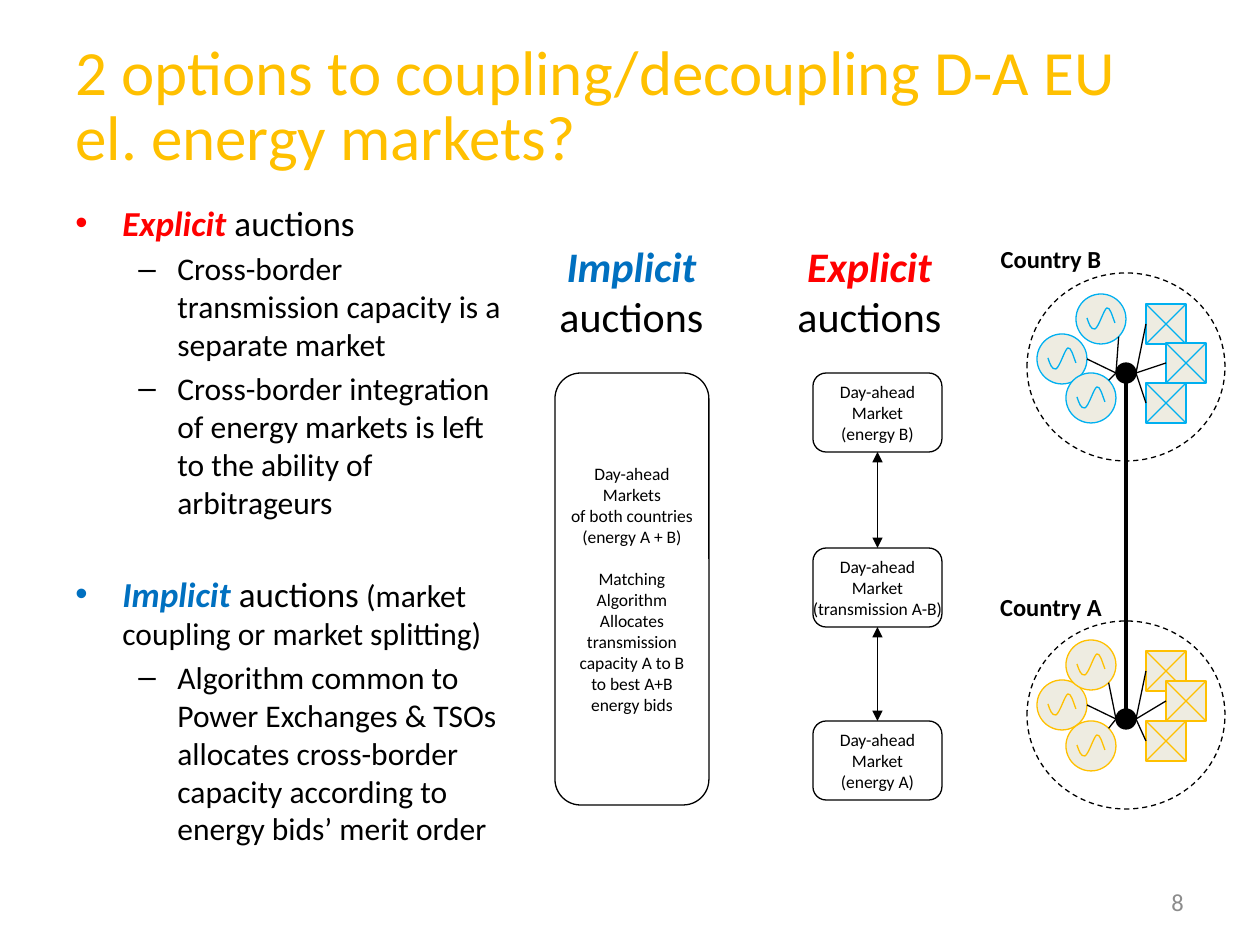
import math

from lxml import etree
from pptx import Presentation
from pptx import util as u
from pptx.dml.color import RGBColor
from pptx.enum import dml, shapes, text
from pptx.oxml.ns import qn

EMU_PER_PX = 914400 / 126
FONT = "Calibri"
BLACK = RGBColor(0, 0, 0)
WHITE = RGBColor(255, 255, 255)
GREY = RGBColor(0x8C, 0x8C, 0x8C)
CREAM = RGBColor(0xEE, 0xEC, 0xE1)
RED = RGBColor(0xFF, 0, 0)
BLUE = RGBColor(0, 0x70, 0xC0)
CYAN = RGBColor(0, 0xB0, 0xF0)
AMBER = RGBColor(0xFF, 0xC0, 0)

GENERATOR, LOAD, HUB = 50, 40, 20
WAVE = [(11, 24), (13, 30), (15, 36), (19, 35), (23, 33),
        (28, 15), (31, 14), (34, 13), (36, 21), (39, 29)]


def px(value):
    return u.Emu(round(value * EMU_PER_PX))


def add_span(para, words, size=18, color=BLACK, strong=False):
    """Add a run; strong means bold and italic."""
    span = para.add_run()
    span.text = words
    font = span.font
    font.name, font.size = FONT, u.Pt(size)
    font.bold = font.italic = strong
    font.color.rgb = color
    return span


def set_bullet(para, mark, color, margin, hang):
    """Hang a bullet mark in front of the paragraph; lengths in px."""
    props = para._p.get_or_add_pPr()
    props.set("marL", str(px(margin)))
    props.set("indent", str(-px(hang)))
    tint = etree.SubElement(props, qn("a:buClr"))
    etree.SubElement(tint, qn("a:srgbClr")).set("val", str(color))
    etree.SubElement(props, qn("a:buFont")).set("typeface", "Arial")
    etree.SubElement(props, qn("a:buChar")).set("char", mark)


class Painter:
    """Holds the current page and the line style shared by its elements."""

    def __init__(self, page, line_width=0.75):
        self.page = page
        self.line_width = line_width

    def text_box(self, left, top, width, height, middle=False):
        box = self.page.shapes.add_textbox(px(left), px(top), px(width), px(height))
        frame = box.text_frame
        frame.word_wrap = True
        frame.vertical_anchor = text.MSO_ANCHOR.MIDDLE if middle else text.MSO_ANCHOR.TOP
        return frame

    def shape(self, kind, left, top, width, height, fill=None, color=BLACK, parent=None):
        home = (parent or self.page).shapes
        shape = home.add_shape(kind, px(left), px(top), px(width), px(height))
        self.style(shape, fill, color)
        return shape

    def style(self, shape, fill, color):
        shape.shadow.inherit = False
        if fill is None:
            shape.fill.background()
        else:
            shape.fill.solid()
            shape.fill.fore_color.rgb = fill
        shape.line.color.rgb = color
        shape.line.width = u.Pt(self.line_width)

    def line(self, start, end, color=BLACK, width=None, parent=None, arrows=False):
        home = (parent or self.page).shapes
        line = home.add_connector(shapes.MSO_CONNECTOR.STRAIGHT,
                                  *[px(value) for value in (*start, *end)])
        line.line.color.rgb = color
        line.line.width = u.Pt(width or self.line_width)
        if arrows:
            for name in ("a:headEnd", "a:tailEnd"):
                etree.SubElement(line.line._get_or_add_ln(), qn(name)).set("type", "triangle")
        etree.SubElement(line._element.spPr, qn("a:effectLst"))
        return line

    def market_box(self, left, top, width, height, blocks):
        """Rounded box with centred lines; each block is set off by a gap."""
        box = self.shape(shapes.MSO_SHAPE.FLOWCHART_ALTERNATE_PROCESS,
                         left, top, width, height, WHITE)
        frame = box.text_frame
        frame.word_wrap = False
        frame.vertical_anchor = text.MSO_ANCHOR.MIDDLE
        para = None
        for block in blocks:
            for number, words in enumerate(block):
                new_block = para is not None and number == 0
                para = frame.paragraphs[0] if para is None else frame.add_paragraph()
                para.alignment = text.PP_ALIGN.CENTER
                if new_block:
                    para.space_before = u.Pt(12)
                add_span(para, words, size=10)
        return box

    def heading(self, left, word, color):
        para = self.text_box(left, 234, 253, 115).paragraphs[0]
        para.alignment = text.PP_ALIGN.CENTER
        add_span(para, word + " ", size=24, color=color, strong=True)
        add_span(para, "auctions", size=24)

    def generator(self, left, top, color):
        group = self.page.shapes.add_group_shape()
        self.shape(shapes.MSO_SHAPE.OVAL, left, top, GENERATOR, GENERATOR, CREAM, color, group)
        points = [(left + x, top + y) for x, y in WAVE]
        builder = group.shapes.build_freeform(*points[0], scale=EMU_PER_PX)
        builder.add_line_segments(points[1:], close=False)
        wave = builder.convert_to_shape()
        self.style(wave, None, color)
        # Each three straight steps become one Bézier curve.
        outline = next(wave._element.iter(qn("a:path")))
        steps = outline.findall(qn("a:lnTo"))
        for first in range(0, len(steps), 3):
            curve = etree.SubElement(outline, qn("a:cubicBezTo"))
            for step in steps[first:first + 3]:
                curve.append(step[0])
                outline.remove(step)

    def load(self, left, top, color):
        group = self.page.shapes.add_group_shape()
        square = self.shape(shapes.MSO_SHAPE.RECTANGLE, left, top, LOAD, LOAD,
                            CREAM, color, group)
        right, bottom = left + LOAD, top + LOAD
        self.line((left, top), (right, bottom), color, parent=group)
        self.line((left, bottom), (right, top), color, parent=group)
        return square

    def country(self, name, top, color, hub_top, generators, load_tops):
        """Generators are (left, top, angle of the wire's end); returns the hub's top."""
        for left, y, _ in generators:
            self.generator(left, top + y, color)
        squares = [self.load(left, top + y, color)
                   for left, y in zip((1146, 1166, 1146), load_tops)]
        hub_left, hub_y = 1116, top + hub_top
        self.shape(shapes.MSO_SHAPE.OVAL, hub_left, hub_y, HUB, HUB, BLACK)
        middle = hub_y + HUB // 2
        radius = GENERATOR / 2
        for left, y, angle in generators:
            turn = math.radians(angle)
            self.line((left + radius * (1 + math.cos(turn)),
                       top + y + radius * (1 + math.sin(turn))), (hub_left, middle))
        for square in squares:
            start = (hub_left + HUB, middle)
            self.line(start, start).end_connect(square, 1)
        border = self.shape(shapes.MSO_SHAPE.OVAL, 1027, top, 198, 188)
        border.line.dash_style = dml.MSO_LINE.DASH
        para = self.text_box(976, top - 39, 150, 49, middle=True).paragraphs[0]
        para.alignment = text.PP_ALIGN.CENTER
        add_span(para, name, size=14).font.bold = True
        return hub_y


def add_auction_list(painter):
    frame = painter.text_box(63, 195, 457, 704)
    sections = [
        ("Explicit", RED, None,
         ["Cross-border transmission capacity is a separate market",
          "Cross-border integration of energy markets is left to the ability of arbitrageurs"]),
        ("Implicit", BLUE, " (market coupling or market splitting)",
         ["Algorithm common to Power Exchanges & TSOs allocates cross-border capacity "
          "according to energy bids’ merit order"]),
    ]
    for number, (word, color, remark, details) in enumerate(sections):
        para = frame.add_paragraph() if number else frame.paragraphs[0]
        set_bullet(para, "•", color, 47, 47)
        if number:
            para.space_before = u.Pt(29.5)
        add_span(para, word + " ", size=20, color=color, strong=True)
        add_span(para, "auctions", size=20)
        if remark:
            add_span(para, remark)
        for detail in details:
            para = frame.add_paragraph()
            para.level = 1
            set_bullet(para, "–", BLACK, 102, 39)
            para.space_before = u.Pt(3.6)
            add_span(para, detail)


def main():
    deck = Presentation()
    deck.slide_width, deck.slide_height = px(1260), px(945)
    painter = Painter(deck.slides.add_slide(deck.slide_layouts[6]))

    title = painter.text_box(63, 37, 1133, 149).paragraphs[0]
    title.line_spacing = u.Pt(37)
    add_span(title, "2 options to coupling/decoupling D-A EU el. energy markets?",
             size=36, color=AMBER)
    add_auction_list(painter)
    number = painter.text_box(1159, 877, 79, 50, middle=True).paragraphs[0]
    add_span(number, "8", size=14, color=GREY)

    markets = [painter.market_box(813, top, 129, 79, [["Day-ahead", "Market", f"({goods})"]])
               for top, goods in ((373, "energy B"), (548, "transmission A-B"),
                                  (721, "energy A"))]
    for upper, lower in zip(markets, markets[1:]):
        arrow = painter.line((877, 452), (877, 548), arrows=True)
        arrow.begin_connect(upper, 2)
        arrow.end_connect(lower, 0)
    painter.market_box(555, 373, 154, 432, [
        ["Day-ahead", "Markets", "of both countries", "(energy A + B)"],
        ["Matching", "Algorithm", "Allocates", "transmission", "capacity A to B",
         "to best A+B", "energy bids"]])
    painter.heading(743, "Explicit", RED)
    painter.heading(505, "Implicit", BLUE)

    hub_b = painter.country("Country B", 273, CYAN, 90,
                            [(1037, 61, 0), (1066, 100, -45), (1076, 21, 45)], (31, 70, 110))
    hub_a = painter.country("Country A", 621, AMBER, 88,
                            [(1037, 59, 0), (1066, 100, -45), (1066, 19, 45)], (30, 60, 100))
    painter.line((1126, hub_b + HUB), (1126, hub_a), width=2)

    deck.save("out.pptx")


if __name__ == "__main__":
    main()
